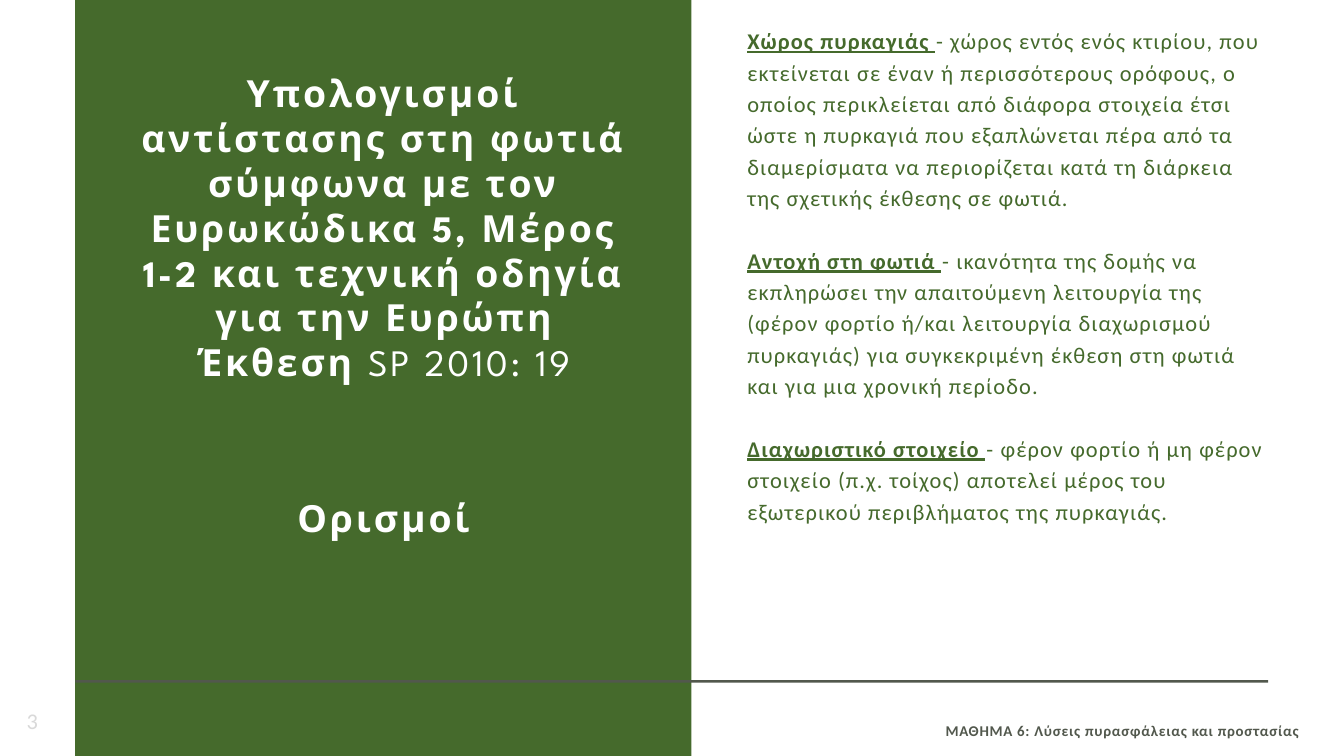
from dataclasses import dataclass

from pptx import Presentation
from pptx.dml.color import RGBColor
from pptx.enum.shapes import MSO_SHAPE
from pptx.enum.text import MSO_ANCHOR, MSO_AUTO_SIZE, PP_ALIGN
from pptx.util import Inches, Pt


@dataclass(frozen=True)
class Theme:
    """Colours, fonts and type sizes of the deck."""
    green: str = "456A2C"
    grey: str = "52584D"
    pale: str = "D9D9D9"
    white: str = "FFFFFF"
    head: str = "League Spartan"
    text: str = "Calibri"
    title: float = 40
    topic: float = 62
    body: float = 24
    foot: float = 16
    lead: float = 33.6
    tall: float = 83.7
    low: float = 22.4


class Page:
    """One slide with its style."""

    def __init__(self, deck, theme):
        """Add a title-only slide on a plain ground."""
        self.theme = theme
        self.slide = deck.slides.add_slide(deck.slide_layouts[5])
        fill = self.slide.background.fill
        fill.solid()
        fill.fore_color.rgb = RGBColor.from_string(theme.white)

    def block(self, box, color):
        """Draw a plain filled rectangle."""
        shape = self.slide.shapes.add_shape(MSO_SHAPE.RECTANGLE, *map(Inches, box))
        shape.shadow.inherit = False
        shape.fill.solid()
        shape.fill.fore_color.rgb = RGBColor.from_string(color)
        shape.line.fill.background()

    def frame(self, shape, inset=0, anchor=MSO_ANCHOR.TOP):
        """Set wrapping, insets and anchor of a text frame."""
        frame = shape.text_frame
        frame.word_wrap = True
        frame.auto_size = MSO_AUTO_SIZE.NONE
        frame.vertical_anchor = anchor
        frame.margin_left = frame.margin_right = Inches(inset)
        frame.margin_top = frame.margin_bottom = Inches(inset / 2)
        return frame

    def style(self, run, font, size, color, space, bold=False, line=False):
        """Format one run."""
        run.font.name = font
        run.font.size = Pt(size)
        run.font.color.rgb = RGBColor.from_string(color)
        run.font.bold = bold
        run.font.underline = line
        run.font._element.set("spc", str(round(space * 100)))

    def title(self, box, name, report, code, topic):
        """Place the title, its source and the topic."""
        look = self.theme
        shape = self.slide.shapes.title
        shape.left, shape.top, shape.width, shape.height = map(Inches, box)
        self.slide.shapes._spTree.append(shape._element)
        frame = self.frame(shape)
        frame.text = "\n".join((name, report, topic))
        first, second, last = frame.paragraphs
        second.add_run().text = code
        last.line_spacing = last.space_before = Pt(look.tall)
        for para in frame.paragraphs:
            para.alignment = PP_ALIGN.CENTER
            size = look.topic if para is last else look.title
            for run in para.runs:
                self.style(run, look.head, size, look.white, 3.1, run.text != code)

    def terms(self, box, items):
        """List terms with their meanings."""
        look = self.theme
        frame = self.frame(self.slide.shapes.add_textbox(*map(Inches, box)))
        frame.text = "\n".join(term for term, _ in items)
        for index, (para, item) in enumerate(zip(frame.paragraphs, items)):
            para.line_spacing = Pt(look.lead)
            para.space_before = Pt(look.lead if index else 0)
            para.add_run().text = item[1]
            for run, bold in zip(para.runs, (True, False)):
                self.style(run, look.text, look.body, look.green, 1.2, bold, bold)

    def number(self, box, text):
        """Place the page number."""
        look = self.theme
        shape = self.slide.shapes.add_textbox(*map(Inches, box))
        frame = self.frame(shape, 0.1, MSO_ANCHOR.MIDDLE)
        frame.text = text
        run = frame.paragraphs[0].runs[0]
        self.style(run, look.text, look.body, look.pale, 1.2)

    def foot(self, box, text):
        """Place the footer line."""
        look = self.theme
        frame = self.frame(self.slide.shapes.add_textbox(*map(Inches, box)))
        frame.text = text
        para = frame.paragraphs[0]
        para.alignment = PP_ALIGN.RIGHT
        para.line_spacing = Pt(look.low)
        self.style(para.runs[0], look.text, look.foot, look.grey, 0.8, True)


TERMS = (
    ("Χώρος πυρκαγιάς ",
     "- χώρος εντός ενός κτιρίου, που εκτείνεται σε έναν ή περισσότερους ορόφους, "
     "ο οποίος περικλείεται από διάφορα στοιχεία έτσι ώστε η πυρκαγιά που "
     "εξαπλώνεται πέρα από τα διαμερίσματα να περιορίζεται κατά τη διάρκεια "
     "της σχετικής έκθεσης σε φωτιά."),
    ("Αντοχή στη φωτιά ",
     "- ικανότητα της δομής να εκπληρώσει την απαιτούμενη λειτουργία της "
     "(φέρον φορτίο ή/και λειτουργία διαχωρισμού πυρκαγιάς) για συγκεκριμένη "
     "έκθεση στη φωτιά και για μια χρονική περίοδο."),
    ("Διαχωριστικό στοιχείο ",
     "- φέρον φορτίο ή μη φέρον στοιχείο (π.χ. τοίχος) αποτελεί μέρος του "
     "εξωτερικού περιβλήματος της πυρκαγιάς."),
)


def main():
    """Build and save the slide."""
    deck = Presentation()
    deck.slide_width, deck.slide_height = Inches(20), Inches(11.25)
    theme = Theme()
    page = Page(deck, theme)
    page.terms((11.12, 0.34, 7.78, 8.11), TERMS)
    page.block((1.12, -0.37, 9.17, 11.98), theme.green)
    page.block((1.12, 10.12, 17.75, 0.04), theme.grey)
    page.title(
        (1.93, 1.05, 7.56, 6.4),
        "Υπολογισμοί αντίστασης στη φωτιά σύμφωνα με τον Ευρωκώδικα 5, "
        "Μέρος 1-2 και τεχνική οδηγία για την Ευρώπη",
        "Έκθεση ", "SP 2010: 19", "Ορισμοί")
    page.number((0.3, 10.52, 2.33, 0.4), "3")
    page.foot((11.33, 10.7, 8.01, 0.29), "ΜΑΘΗΜΑ 6: Λύσεις πυρασφάλειας και προστασίας")
    deck.save("out.pptx")


if __name__ == "__main__":
    main()
